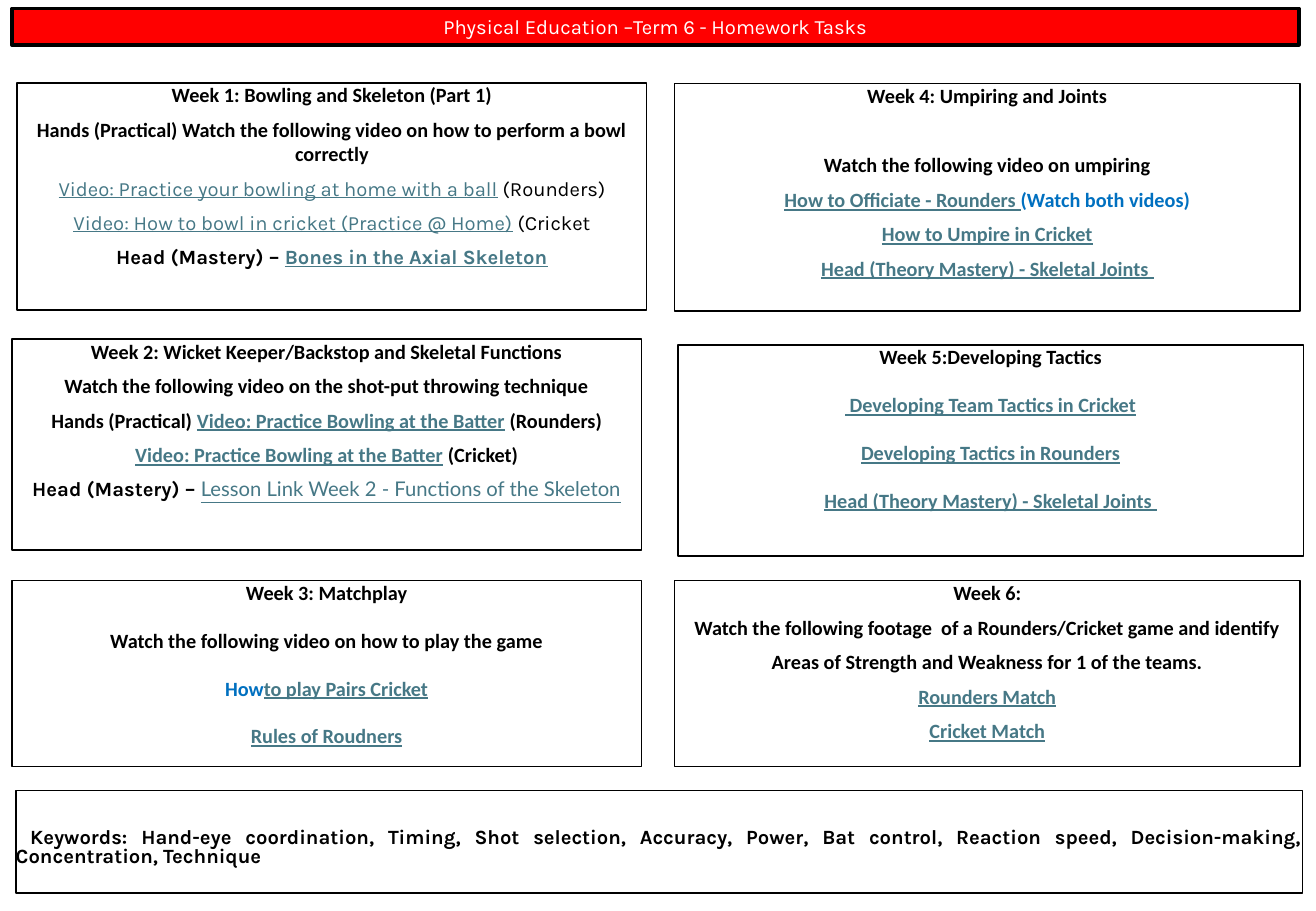
import pptx
import pptx.util
import pptx.dml.color
import pptx.enum.shapes
import pptx.enum.text

Cm, Pt = pptx.util.Cm, pptx.util.Pt
ALIGN = pptx.enum.text.PP_ALIGN
ANCHOR = pptx.enum.text.MSO_ANCHOR

THEME = {
    "size": 12, "main": "Calibri", "alt": "Karla", "third": "Lato",
    "ink": "000000", "link": "467886", "blue": "0070C0",
    "red": "FF0000", "white": "FFFFFF",
    "thin": 1, "thick": 2.25, "tight": 6, "loose": 13.9, "skip": 26.5,
}

# Run styles: font, colour, bold, underline
STYLES = {
    "bold": ("main", "ink", True, False),
    "link": ("main", "link", True, True),
    "blue": ("main", "blue", True, False),
    "alt": ("alt", "ink", False, False),
    "alt bold": ("alt", "ink", True, False),
    "alt link": ("alt", "link", False, True),
    "alt bold link": ("alt", "link", True, True),
    "third link": ("third", "link", False, True),
    "title": ("alt", "white", False, False),
}

TITLE = "Physical Education –Term 6 - Homework Tasks"
WORDS = ("Keywords: Hand-eye coordination, Timing, Shot selection, Accuracy, "
         "Power, Bat control, Reaction speed, Decision-making, "
         "Concentration, Technique")

# A line is a list of (text, style) runs
WEEK1 = [
    [("Week 1: Bowling and Skeleton (Part 1)", "bold")],
    [("Hands (Practical) Watch the following video on how to perform a bowl "
      "correctly", "bold")],
    [("Video: Practice your bowling at home with a ball", "alt link"),
     (" (Rounders)", "alt")],
    [("Video: How to bowl in cricket (Practice @ Home)", "alt link"),
     (" (Cricket", "alt")],
    [("Head (Mastery) – ", "alt bold"),
     ("Bones in the Axial Skeleton", "alt bold link")],
]
WEEK2 = [
    [("Week 2: Wicket Keeper/Backstop and Skeletal Functions", "bold")],
    [("Watch the following video on the shot-put throwing technique", "bold")],
    [("Hands (Practical) ", "bold"),
     ("Video: Practice Bowling at the Batter", "link"),
     (" (Rounders)", "bold")],
    [("Video: Practice Bowling at the Batter", "link"),
     (" (Cricket)", "bold")],
    [("Head (Mastery) – ", "alt bold"),
     ("Lesson Link Week 2 - Functions of the Skeleton", "third link")],
]
WEEK3 = [
    [("Week 3: Matchplay", "bold")],
    [("Watch the following video on how to play the game", "bold")],
    [("How", "blue"), ("to play Pairs Cricket", "link")],
    [("Rules of Roudners", "link")],
]
WEEK4 = [
    [("Week 4: Umpiring and Joints", "bold")],
    [("Watch the following video on umpiring", "bold")],
    [("How to Officiate - Rounders ", "link"),
     ("(Watch both videos)", "blue")],
    [("How to Umpire in Cricket", "link")],
    [("Head (Theory Mastery) - Skeletal Joints ", "link")],
]
WEEK5 = [
    [("Week 5:Developing Tactics", "bold")],
    [(" Developing Team Tactics in Cricket", "link")],
    [("Developing Tactics in Rounders", "link")],
    [("Head (Theory Mastery) - Skeletal Joints ", "link")],
]
WEEK6 = [
    [("Week 6:", "bold")],
    [("Watch the following footage  of a Rounders/Cricket game and identify",
      "bold")],
    [("Areas of Strength and Weakness for 1 of the teams.", "bold")],
    [("Rounders Match", "link")],
    [("Cricket Match", "link")],
]

# Lines, column, row, shift right and down in cm, gap, gap after the heading
WEEKS = [
    (WEEK1, 0, 0, 0.11, 0, "tight", "tight"),
    (WEEK2, 0, 1, 0, 0, "tight", "tight"),
    (WEEK3, 0, 2, 0, 0, "loose", "loose"),
    (WEEK4, 1, 0, 0, 0.02, "tight", "skip"),
    (WEEK5, 1, 1, 0.07, 0.12, "loose", "loose"),
    (WEEK6, 1, 2, 0, 0, "tight", "tight"),
]
COLS = [(0.25, 13.16), (14.1, 13.08)]
ROWS = [(1.73, 4.75), (7.09, 4.42), (12.14, 3.89)]


def tint(name):
    return pptx.dml.color.RGBColor.from_string(THEME[name])


def add_box(slide, x, y, w, h, fill=None, line="thin"):
    box = slide.shapes.add_shape(
        pptx.enum.shapes.MSO_SHAPE.RECTANGLE, Cm(x), Cm(y), Cm(w), Cm(h))
    box.shadow.inherit = False
    if fill:
        box.fill.solid()
        box.fill.fore_color.rgb = tint(fill)
    else:
        box.fill.background()
    box.line.color.rgb = tint("ink")
    box.line.width = Pt(THEME[line])
    return box


def put_text(box, lines, align=ALIGN.CENTER, anchor=ANCHOR.TOP, gap=0,
             first=None, lead=None, inset=0, indent=0):
    """Fill a box; first is the gap after line one, lead the line pitch."""
    frame = box.text_frame
    frame.word_wrap = True
    frame.vertical_anchor = anchor
    frame.margin_left = frame.margin_right = frame.margin_bottom = 0
    frame.margin_top = Cm(inset)
    for i, runs in enumerate(lines):
        para = frame.paragraphs[0] if i == 0 else frame.add_paragraph()
        para.alignment = align
        if i:
            para.space_before = Pt(first if i == 1 and first else gap)
        if lead:
            para.line_spacing = Pt(lead)
        if indent:
            para._p.get_or_add_pPr().set("indent", str(Cm(indent)))
        for text, style in runs:
            face, color, bold, under = STYLES[style]
            run = para.add_run()
            run.text = text
            run.font.name = THEME[face]
            run.font.size = Pt(THEME["size"])
            run.font.bold = bold
            run.font.underline = under
            run.font.color.rgb = tint(color)


def main():
    deck = pptx.Presentation()
    deck.slide_width, deck.slide_height = Cm(27.51), Cm(19.05)
    slide = deck.slides.add_slide(deck.slide_layouts[6])

    banner = add_box(slide, 0.25, 0.18, 26.9, 0.76, fill="red", line="thick")
    put_text(banner, [[(TITLE, "title")]], anchor=ANCHOR.MIDDLE)

    for lines, col, row, right, down, gap, first in WEEKS:
        (x, w), (y, h) = COLS[col], ROWS[row]
        box = add_box(slide, x + right, y + down, w, h)
        put_text(box, lines, gap=THEME[gap], first=THEME[first])

    words = add_box(slide, 0.33, 16.53, 26.9, 2.14)
    put_text(words, [[(WORDS, "alt bold")]], align=ALIGN.JUSTIFY,
             lead=11.5, inset=0.81, indent=0.3)

    deck.save("out.pptx")


if __name__ == "__main__":
    main()
